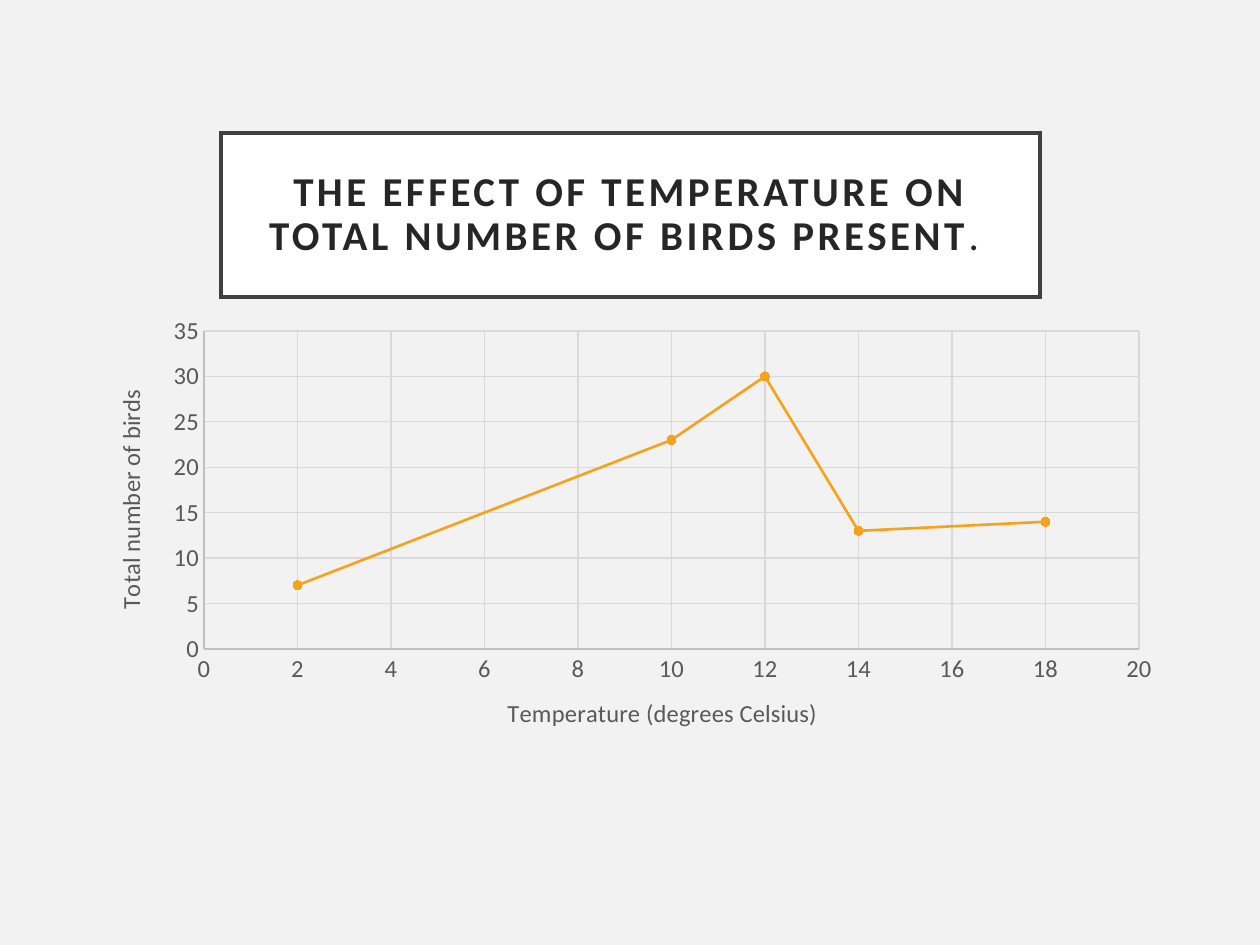
from lxml.etree import SubElement
from pptx import Presentation
from pptx.chart.data import XyChartData
from pptx.dml.color import RGBColor
from pptx.enum.chart import XL_CHART_TYPE, XL_MARKER_STYLE, XL_TICK_MARK
from pptx.enum.text import MSO_ANCHOR, MSO_AUTO_SIZE, PP_ALIGN
from pptx.oxml.ns import qn
from pptx.util import Emu, Pt

PX_PER_INCH = 126
CHART_BOX = (87, 306, 1086, 450)
PLOT_BOX = (204, 331, 935, 318)
TEMPERATURES = (2, 10, 12, 14, 18)
BIRDS = (7, 23, 30, 13, 14)


def px(n):
    return Emu(round(n * 914400 / PX_PER_INCH))


def color(hex_text):
    return RGBColor.from_string(hex_text)


def add_text(p, text, font="Calibri", size=14, fill="595959", bold=False, spacing=0):
    """Append a run; spacing is the letter spacing in points."""
    r = p.add_run()
    r.text = text
    r.font.name = font
    r.font.size = Pt(size)
    r.font.bold = bold
    r.font.color.rgb = color(fill)
    if spacing:
        r.font._element.set("spc", str(spacing * 100))


def set_line(line, hex_text, width):
    line.color.rgb = color(hex_text)
    line.width = Pt(width)


def place(parent, index, box, inner=False):
    """Fix a chart part at a slide position, given as left, top and maybe width, height."""
    for old in parent.findall(qn("c:layout")):
        parent.remove(old)
    layout = SubElement(parent, qn("c:layout"))
    parent.insert(index, layout)
    manual = SubElement(layout, qn("c:manualLayout"))
    left, top, width, height = CHART_BOX
    if inner:
        SubElement(manual, qn("c:layoutTarget")).set("val", "inner")
    for tag in ("xMode", "yMode"):
        SubElement(manual, qn(f"c:{tag}")).set("val", "edge")
    offsets = (left, top, 0, 0)
    for tag, value, offset, total in zip("xywh", box, offsets, (width, height) * 2):
        share = (value - offset) / total
        SubElement(manual, qn(f"c:{tag}")).set("val", f"{share:.4f}")


class Deck:
    """Holds the style and the current slide."""

    ink, frame, accent = "262626", "404040", "F6A21D"
    label, axis_line, grid = "595959", "BFBFBF", "D9D9D9"

    def __init__(self, prs):
        self.s = prs.slides.add_slide(prs.slide_layouts[5])
        self.s.background.fill.solid()
        self.s.background.fill.fore_color.rgb = color("F2F2F2")

    def title(self, box, text, ending):
        sp = self.s.shapes.title
        sp.left, sp.top, sp.width, sp.height = map(px, box)
        sp.fill.solid()
        sp.fill.fore_color.rgb = color("FFFFFF")
        set_line(sp.line, self.frame, 2.5)
        SubElement(sp.line._ln, qn("a:miter")).set("lim", "800000")
        tf = sp.text_frame
        tf.word_wrap = True
        tf.auto_size = MSO_AUTO_SIZE.NONE
        tf.vertical_anchor = MSO_ANCHOR.MIDDLE
        tf.margin_left = tf.margin_right = tf.margin_top = tf.margin_bottom = px(25)
        p = tf.paragraphs[0]
        p.alignment = PP_ALIGN.CENTER
        p.line_spacing = 0.9
        for part, bold in ((text, True), (ending, False)):
            add_text(p, part, size=23.4, fill=self.ink, bold=bold, spacing=2)

    def axis(self, axis, text, position, maximum, step, rotation=0):
        axis.minimum_scale, axis.maximum_scale, axis.major_unit = 0, maximum, step
        axis.major_tick_mark = axis.minor_tick_mark = XL_TICK_MARK.NONE
        axis.has_major_gridlines = True
        set_line(axis.major_gridlines.format.line, self.grid, 0.75)
        set_line(axis.format.line, self.axis_line, 0.75)
        font = axis.tick_labels.font
        font.name, font.size = "Calibri", Pt(14)
        font.color.rgb = color(self.label)
        tf = axis.axis_title.text_frame
        add_text(tf.paragraphs[0], text, fill=self.label)
        body = tf._txBody.find(qn("a:bodyPr"))
        body.set("rot", str(rotation * 60000))
        body.set("vert", "horz")
        place(axis.axis_title._element, 1, position)

    def scatter(self, name, points):
        data = XyChartData()
        series = data.add_series(name)
        for x, y in points:
            series.add_data_point(x, y)
        chart = self.s.shapes.add_chart(
            XL_CHART_TYPE.XY_SCATTER_LINES, *map(px, CHART_BOX), data).chart
        chart.has_title = chart.has_legend = False
        chart.font.name, chart.font.size = "Calibri", Pt(10)
        plot = chart.plots[0]
        plot.vary_by_categories = False
        line = plot.series[0]
        line.smooth = False
        set_line(line.format.line, self.accent, 1.5)
        marker = line.marker
        marker.style, marker.size = XL_MARKER_STYLE.CIRCLE, 5
        marker.format.fill.solid()
        marker.format.fill.fore_color.rgb = color(self.accent)
        set_line(marker.format.line, self.accent, 0.75)
        place(chart._chartSpace.chart.plotArea, 0, PLOT_BOX, inner=True)
        self.axis(chart.category_axis, "Temperature (degrees Celsius)", (503, 692), 20, 2)
        self.axis(chart.value_axis, "Total number of birds", (109, 385), 35, 5, rotation=-90)


def main():
    prs = Presentation()
    prs.slide_width, prs.slide_height = px(1260), px(945)
    deck = Deck(prs)
    deck.title((221, 133, 819, 164),
               "THE EFFECT OF TEMPERATURE ON TOTAL NUMBER OF BIRDS PRESENT", ". ")
    deck.scatter("Series 1", zip(TEMPERATURES, BIRDS))
    prs.save("out.pptx")


if __name__ == "__main__":
    main()
